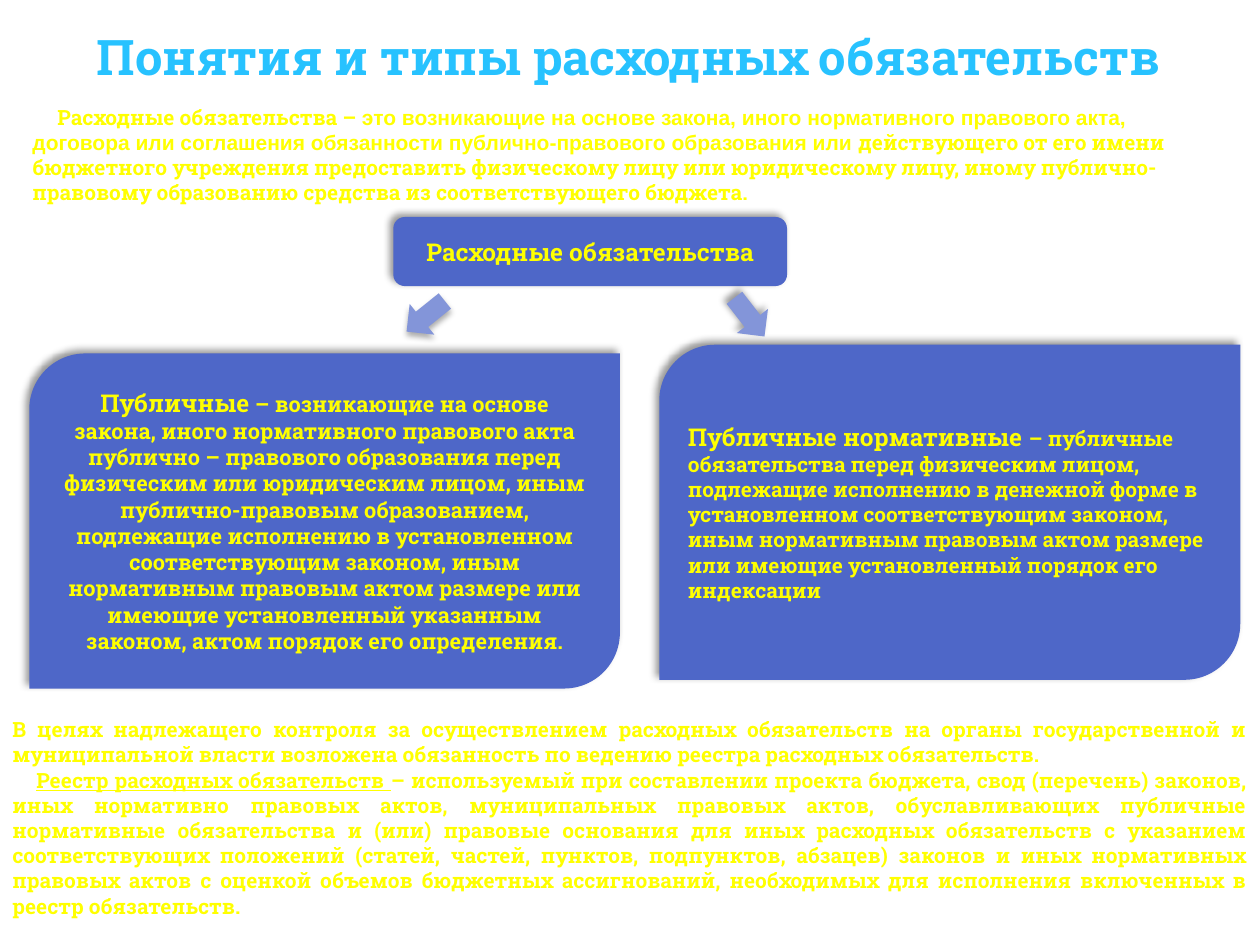
import pptx
import pptx.util
import pptx.dml.color
import pptx.enum.shapes
import pptx.enum.text
import pptx.oxml
import pptx.oxml.ns

Pt = pptx.util.Pt
SHAPE = pptx.enum.shapes.MSO_SHAPE
ALIGN = pptx.enum.text.PP_ALIGN
ANCHOR = pptx.enum.text.MSO_ANCHOR
COLORS = {"title": "27C2FF", "text": "FFFF00", "card": "4E67C8",
          "arrow": "8395D9", "shade": "000000"}
FONT = "Roboto Slab"


def color(name):
    return pptx.dml.color.RGBColor.from_string(COLORS[name])


def write(par, runs, align=ALIGN.LEFT, tone="text", size=None, font=FONT, indent=0):
    """Fill a paragraph with (text, run settings) pairs."""
    par.alignment = align
    par.font.bold = True
    par.font.color.rgb = color(tone)
    if size:
        par.font.size = Pt(size)
    if font:
        par.font.name = font
    if indent:
        props = par._p.get_or_add_pPr()
        props.set("marL", "0")
        props.set("indent", str(Pt(indent)))
    for text, style in runs:
        run = par.add_run()
        run.text = text
        for key, value in style.items():
            setattr(run.font, key, value)


def add_shade(shape, alpha=40, blur=4, dist=3, angle=225):
    shape.shadow.inherit = False
    effects = shape._element.spPr.find(pptx.oxml.ns.qn("a:effectLst"))
    effects.append(pptx.oxml.parse_xml(
        f'<a:outerShdw {pptx.oxml.ns.nsdecls("a")} blurRad="{Pt(blur)}" '
        f'dist="{Pt(dist)}" dir="{angle * 60000}" algn="tl" rotWithShape="0">'
        f'<a:srgbClr val="{COLORS["shade"]}"><a:alpha val="{alpha * 1000}"/>'
        '</a:srgbClr></a:outerShdw>'))


def add_block(slide, kind, box, fill, **shade):
    shape = slide.shapes.add_shape(kind, *map(Pt, box))
    shape.fill.solid()
    shape.fill.fore_color.rgb = color(fill)
    shape.line.fill.background()
    add_shade(shape, **shade)
    return shape


def add_card(slide, kind, box, runs, **style):
    card = add_block(slide, kind, box, "card")
    frame = card.text_frame
    frame.word_wrap = True
    frame.vertical_anchor = ANCHOR.MIDDLE
    write(frame.paragraphs[0], runs, **style)


def add_arrow(slide, box, turn, **shade):
    add_block(slide, SHAPE.RIGHT_ARROW, box, "arrow", **shade).rotation = turn


def add_frame(slide, box):
    frame = slide.shapes.add_textbox(*map(Pt, box)).text_frame
    frame.word_wrap = True
    return frame


def add_title(slide, box):
    title = slide.shapes.title
    title.left, title.top, title.width, title.height = map(Pt, box)
    frame = title.text_frame
    frame.auto_size = pptx.enum.text.MSO_AUTO_SIZE.NONE
    frame.vertical_anchor = ANCHOR.MIDDLE
    write(frame.paragraphs[0], [("Понятия и типы расходных обязательств", {})],
          ALIGN.CENTER, "title", 28)


def add_intro(slide, box):
    slab = {"name": FONT}
    write(add_frame(slide, box).paragraphs[0], [
        ("Расходные обязательства – ", slab),
        ("это возникающие на основе закона, иного нормативного правового акта, "
         "договора или соглашения обязанности публично-правового образования или",
         {"name": "Arial"}),
        (" действующего от его имени бюджетного учреждения предоставить физическому "
         "лицу или юридическому лицу, иному публично- правовому образованию средства "
         "из соответствующего бюджета.", slab)],
        size=12, font=None, indent=14.3)


def add_scheme(slide, box):
    """Root card, two arrows and the two types of obligations."""
    left, top, width, height = box
    add_card(slide, SHAPE.ROUNDED_RECTANGLE, (left + 208, top, 225, 39.5),
             [("Расходные обязательства", {})], align=ALIGN.CENTER, size=14)

    # Types
    tall = 191.5
    head = {"size": Pt(14)}
    add_card(slide, SHAPE.ROUND_2_DIAG_RECTANGLE,
             (left, top + height - tall, 337.5, tall), [
        ("Публичные", head),
        (" – возникающие на основе закона, иного нормативного правового акта "
         "публично – правового образования перед физическим или юридическим лицом, "
         "иным публично-правовым образованием, подлежащие исполнению в установленном "
         "соответствующим законом, иным нормативным правовым актом размере или "
         "имеющие установленный указанным законом, актом порядок его определения.",
         {"size": Pt(12.5)})], align=ALIGN.CENTER)
    add_card(slide, SHAPE.ROUND_2_DIAG_RECTANGLE,
             (left + width - 332, top + 73, 332, tall), [
        ("Публичные нормативные ", head),
        ("– публичные обязательства перед физическим лицом, подлежащие исполнению в "
         "денежной форме в установленном соответствующим законом, иным нормативным "
         "правовым актом размере или имеющие установленный порядок его индексации",
         {"size": Pt(12)})])

    # Arrows
    add_arrow(slide, (left + 397.5, top + 46, 28, 22.5), 52.2)
    add_arrow(slide, (left + 212.5, top + 45.5, 28, 22.5), 141.3,
              alpha=32, blur=3.5, dist=2.2, angle=90)


def add_notes(slide, box):
    frame = add_frame(slide, box)
    write(frame.paragraphs[0], [
        ("В целях надлежащего контроля за осуществлением расходных обязательств на "
         "органы государственной и муниципальной власти возложена обязанность по "
         "ведению реестра расходных обязательств.", {})], ALIGN.JUSTIFY, size=12)
    write(frame.add_paragraph(), [
        ("Реестр расходных обязательств ", {"underline": True}),
        ("– используемый при составлении проекта бюджета, свод (перечень) законов, "
         "иных нормативно правовых актов, муниципальных правовых актов, "
         "обуславливающих публичные нормативные обязательства и (или) правовые "
         "основания для иных расходных обязательств с указанием соответствующих "
         "положений (статей, частей, пунктов, подпунктов, абзацев) законов и иных "
         "нормативных правовых актов с оценкой объемов бюджетных ассигнований, "
         "необходимых для исполнения включенных в реестр обязательств.", {})],
        ALIGN.JUSTIFY, size=12, indent=13.7)


def main():
    deck = pptx.Presentation()
    deck.slide_width, deck.slide_height = Pt(720), Pt(540)
    slide = deck.slides.add_slide(deck.slide_layouts[5])
    add_title(slide, (0, 11.5, 718, 41))
    add_intro(slide, (11.5, 56, 698, 65))
    add_scheme(slide, (16.75, 124, 692, 269.5))
    add_notes(slide, (0, 406, 720, 108))
    deck.save("out.pptx")


if __name__ == "__main__":
    main()
